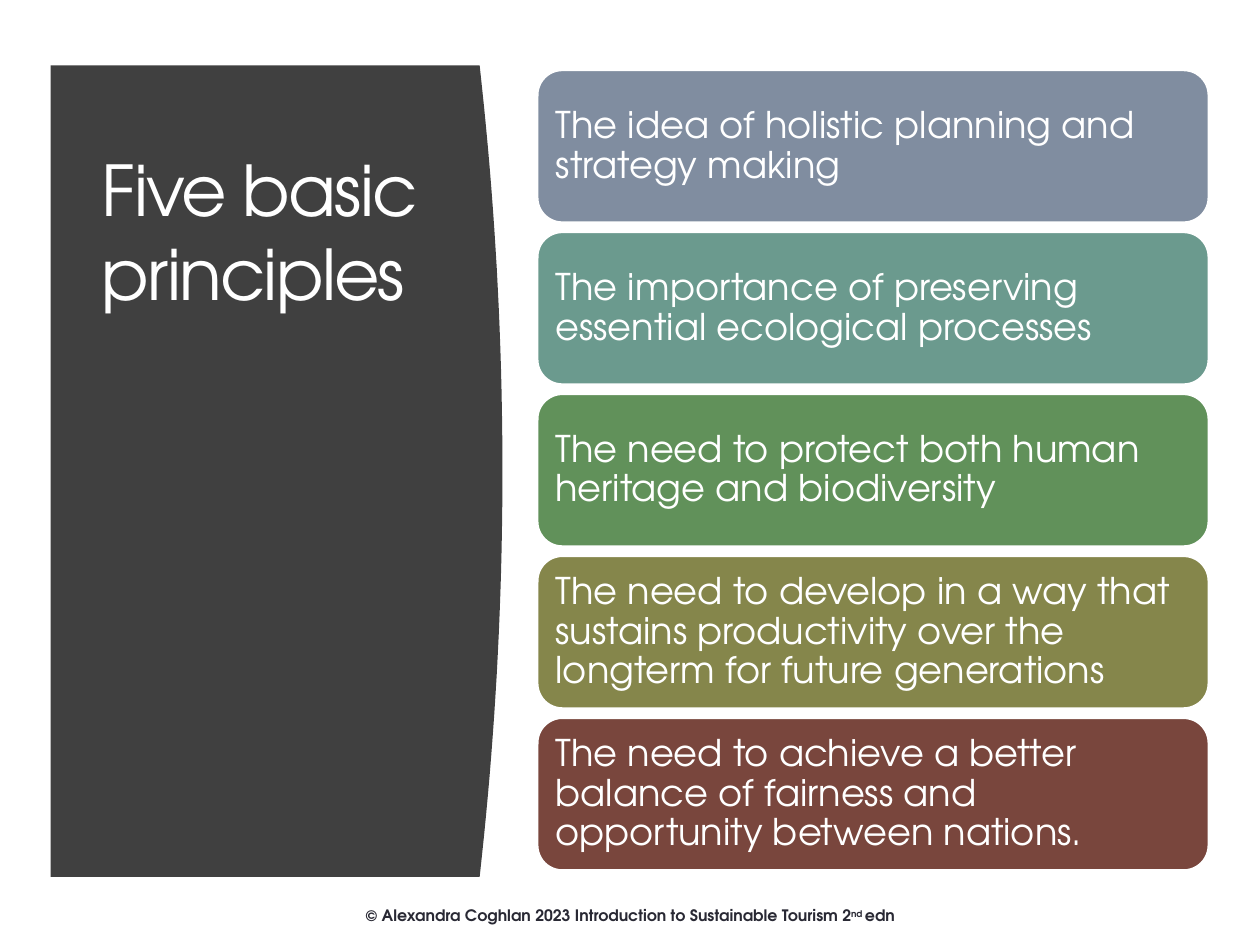
from dataclasses import dataclass

from pptx import Presentation
from pptx.dml.color import RGBColor
from pptx.enum.shapes import MSO_SHAPE as Shape
from pptx.enum.text import MSO_ANCHOR as Anchor, MSO_AUTO_SIZE as AutoSize, PP_ALIGN as Align
from pptx.util import Cm, Pt


@dataclass(frozen=True)
class Theme:
    font: str = "TeX Gyre Adventor"
    white: str = "FFFFFF"
    panel: str = "404040"
    footer: str = "292934"
    title_size: int = 40
    card_size: int = 21
    footer_size: int = 9


THEME = Theme()
PRINCIPLES = [
    ("The idea of holistic planning and strategy making", "808DA0"),
    ("The importance of preserving essential ecological processes", "6B9A8E"),
    ("The need to protect both human heritage and biodiversity", "61915A"),
    ("The need to develop in a way that sustains productivity over the "
     "longterm for future generations", "85864B"),
    ("The need to achieve a better balance of fairness and opportunity "
     "between nations.", "79463D"),
]


def color(value):
    return RGBColor.from_string(value)


def add_run(paragraph, text, size, fill, bold=False):
    run = paragraph.add_run()
    run.text = text
    run.font.name = THEME.font
    run.font.size = Pt(size)
    run.font.bold = bold
    run.font.color.rgb = color(fill)
    return run


def add_curved_panel(slide):
    left, top, edge, height = 1.02, 1.32, 9.67, 16.36
    bulge, steps = 0.46, 40
    curve = []
    for step in range(steps + 1):
        part = step / steps
        curve.append((Cm(edge + 4 * bulge * part * (1 - part)), Cm(top + height * part)))
    builder = slide.shapes.build_freeform(Cm(left), Cm(top))
    builder.add_line_segments(curve + [(Cm(left), Cm(top + height))], close=True)
    panel = builder.convert_to_shape()
    panel.shadow.inherit = False
    panel.fill.solid()
    panel.fill.fore_color.rgb = color(THEME.panel)
    panel.line.fill.background()
    return panel


def format_title(slide, text):
    title = slide.shapes.title
    title.left, title.top, title.width, title.height = Cm(1.8), Cm(2.82), Cm(7.11), Cm(13.31)
    frame = title.text_frame
    frame.word_wrap = True
    frame.auto_size = AutoSize.NONE
    frame.vertical_anchor = Anchor.TOP
    paragraph = frame.paragraphs[0]
    paragraph.alignment = Align.LEFT
    run = add_run(paragraph, text, THEME.title_size, THEME.white)
    run.font._element.set("spc", "-100")
    return title


def add_card(slide, top, text, fill):
    card = slide.shapes.add_shape(Shape.ROUNDED_RECTANGLE, Cm(10.82), Cm(top), Cm(13.56), Cm(3.1))
    card.shadow.inherit = False
    card.fill.solid()
    card.fill.fore_color.rgb = color(fill)
    card.line.color.rgb = color(THEME.white)
    card.line.width = Pt(2.08)
    frame = card.text_frame
    frame.word_wrap = True
    frame.vertical_anchor = Anchor.MIDDLE
    frame.margin_left = frame.margin_right = Cm(0.23)
    frame.margin_top = frame.margin_bottom = Cm(0.23)
    paragraph = frame.paragraphs[0]
    paragraph.alignment = Align.LEFT
    paragraph.line_spacing = 0.9
    add_run(paragraph, text, THEME.card_size, THEME.white)


def add_footer(slide):
    frame = slide.shapes.add_textbox(Cm(6.71), Cm(18.14), Cm(11.99), Cm(0.64)).text_frame
    frame.word_wrap = True
    frame.auto_size = AutoSize.SHAPE_TO_FIT_TEXT
    paragraph = frame.paragraphs[0]
    paragraph.alignment = Align.CENTER
    parts = [
        ("© Alexandra Coghlan 2023 Introduction to Sustainable Tourism 2", 0),
        ("nd ", 30000),
        ("edn", 0),
    ]
    for text, baseline in parts:
        run = add_run(paragraph, text, THEME.footer_size, THEME.footer, bold=True)
        if baseline:
            run.font._element.set("baseline", str(baseline))


def main():
    presentation = Presentation()
    presentation.slide_width, presentation.slide_height = Cm(25.4), Cm(19.05)
    slide = presentation.slides.add_slide(presentation.slide_layouts[5])
    title = format_title(slide, "Five basic principles")
    panel = add_curved_panel(slide)
    title.element.addprevious(panel.element)
    for index, (text, fill) in enumerate(PRINCIPLES):
        add_card(slide, 1.4 + 3.265 * index, text, fill)
    add_footer(slide)
    presentation.save("out.pptx")


if __name__ == "__main__":
    main()
